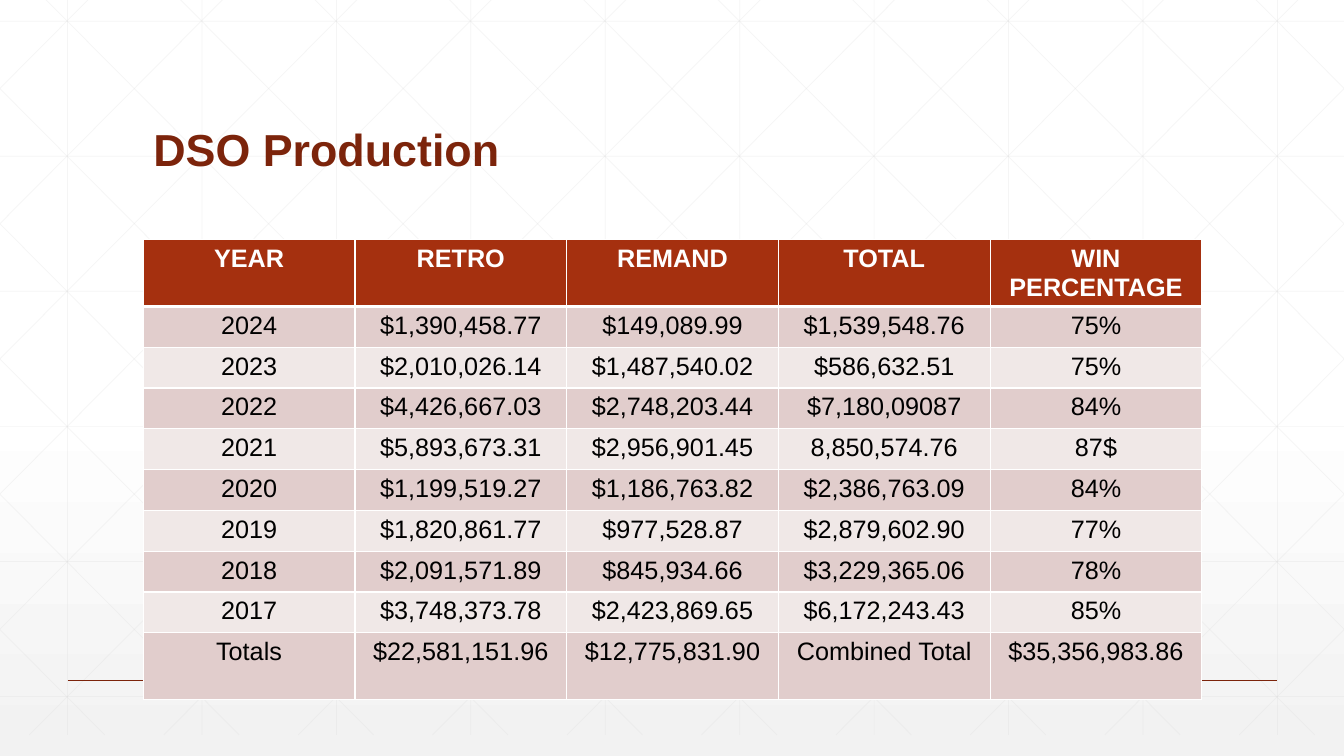
import pptx
import pptx.dml.color
import pptx.enum.shapes
import pptx.enum.text
import pptx.oxml
import pptx.oxml.ns
import pptx.util

Inches = pptx.util.Inches
Pt = pptx.util.Pt
RGBColor = pptx.dml.color.RGBColor
PP_ALIGN = pptx.enum.text.PP_ALIGN

WHITE = RGBColor(0xFF, 0xFF, 0xFF)
BLACK = RGBColor(0x00, 0x00, 0x00)
MIST = RGBColor(0xF2, 0xF2, 0xF2)
GRID_GREY = RGBColor(0xD9, 0xD9, 0xD9)
MAROON = RGBColor(0x7C, 0x24, 0x0B)
RUST = RGBColor(0xA5, 0x30, 0x0F)
ROSE = RGBColor(0xE1, 0xCD, 0xCC)
BLUSH = RGBColor(0xF0, 0xE8, 0xE7)

WIDTH, HEIGHT = 13.33, 7.5
GRID_TOP, GRID_BOTTOM = -0.21, 7.29
STEP = 4 / 3
SLOPE = 7.5 / 7.455
ROWS = [
    ["YEAR", "RETRO", "REMAND", "TOTAL", "WIN PERCENTAGE"],
    ["2024", "$1,390,458.77", "$149,089.99", "$1,539,548.76", "75%"],
    ["2023", "$2,010,026.14", "$1,487,540.02", "$586,632.51", "75%"],
    ["2022", "$4,426,667.03", "$2,748,203.44", "$7,180,09087", "84%"],
    ["2021", "$5,893,673.31", "$2,956,901.45", "8,850,574.76", "87$"],
    ["2020", "$1,199,519.27", "$1,186,763.82", "$2,386,763.09", "84%"],
    ["2019", "$1,820,861.77", "$977,528.87", "$2,879,602.90", "77%"],
    ["2018", "$2,091,571.89", "$845,934.66", "$3,229,365.06", "78%"],
    ["2017", "$3,748,373.78", "$2,423,869.65", "$6,172,243.43", "85%"],
    ["Totals", "$22,581,151.96", "$12,775,831.90", "Combined Total", "$35,356,983.86"],
]


def draw_line(page, ends, color, width, opacity=100):
    line = page.shapes.add_connector(
        pptx.enum.shapes.MSO_CONNECTOR.STRAIGHT, *[Inches(end) for end in ends])
    line.line.color.rgb = color
    line.line.width = Pt(width)
    properties = line.element.spPr
    if opacity < 100:
        tint = properties.find(".//" + pptx.oxml.ns.qn("a:srgbClr"))
        tint.append(pptx.oxml.parse_xml(
            f'<a:alpha {pptx.oxml.ns.nsdecls("a")} val="{opacity * 1000}"/>'))
    properties.append(pptx.oxml.parse_xml(
        f'<a:effectLst {pptx.oxml.ns.nsdecls("a")}/>'))


def format_font(font, formats):
    font.color.rgb = formats["color"]
    for name in ("name", "size", "bold"):
        setattr(font, name, formats[name])


deck = pptx.Presentation()
deck.slide_width = Inches(WIDTH)
deck.slide_height = Inches(HEIGHT)
page = deck.slides.add_slide(deck.slide_layouts[5])

backdrop = page.background.fill
backdrop.gradient()
backdrop.gradient_angle = 270
for stop, position, color in zip(backdrop.gradient_stops, (0.53, 1), (WHITE, MIST)):
    stop.position = position
    stop.color.rgb = color

grid = []
for column in range(10):
    x = 0.67 + column * STEP
    grid.append((x, GRID_TOP, x, GRID_BOTTOM))
for row in range(6):
    y = 0.21 + row * 1.34
    grid.append((0, y, WIDTH, y))
for diagonal in range(-5, 10):
    start = 0.25 + diagonal * STEP
    left = max(start, 0)
    right = min(start + 7.455, WIDTH)
    top = GRID_TOP + (left - start) * SLOPE
    bottom = GRID_TOP + (right - start) * SLOPE
    grid.append((left, top, right, bottom))
    grid.append((WIDTH - left, top, WIDTH - right, bottom))
for ends in grid:
    draw_line(page, ends, GRID_GREY, 0.5, 25)
draw_line(page, (0.67, 6.75, 12.67, 6.75), MAROON, 1)

title = page.shapes.title
title.element.getparent().append(title.element)
title.left, title.top, title.width, title.height = map(Inches, (1.42, 0.55, 10.5, 1.25))
title.text_frame.text = "DSO Production"
title.text_frame.auto_size = pptx.enum.text.MSO_AUTO_SIZE.NONE
title.text_frame.vertical_anchor = pptx.enum.text.MSO_ANCHOR.BOTTOM
para = title.text_frame.paragraphs[0]
para.alignment = PP_ALIGN.LEFT
para.line_spacing = 0.9
format_font(para.font, {"name": "Arial", "size": Pt(32), "bold": True, "color": MAROON})

table = page.shapes.add_table(
    len(ROWS), len(ROWS[0]), Inches(1.42), Inches(2.38), Inches(10.5), Inches(4.56)).table
for column in table.columns:
    column.width = Inches(2.1)
for row_index, texts in enumerate(ROWS):
    header = row_index == 0
    tall = row_index in (0, len(ROWS) - 1)
    table.rows[row_index].height = Inches(0.66 if tall else 3.24 / 8)
    fill = RUST if header else (ROSE if row_index % 2 else BLUSH)
    formats = {"name": "Arial", "size": Pt(18), "bold": header,
               "color": WHITE if header else BLACK}
    border_widths = {"lnL": 1, "lnR": 1, "lnT": 3 if row_index == 1 else 1,
                     "lnB": 3 if header else 1}
    for column_index, text in enumerate(texts):
        cell = table.cell(row_index, column_index)
        cell.text = text
        para = cell.text_frame.paragraphs[0]
        para.alignment = PP_ALIGN.CENTER
        format_font(para.runs[0].font, formats)
        for side, width in border_widths.items():
            cell._tc.get_or_add_tcPr().append(pptx.oxml.parse_xml(
                f'<a:{side} {pptx.oxml.ns.nsdecls("a")} w="{Pt(width)}">'
                f'<a:solidFill><a:srgbClr val="{WHITE}"/></a:solidFill></a:{side}>'))
        cell.fill.solid()
        cell.fill.fore_color.rgb = fill

deck.save("out.pptx")
